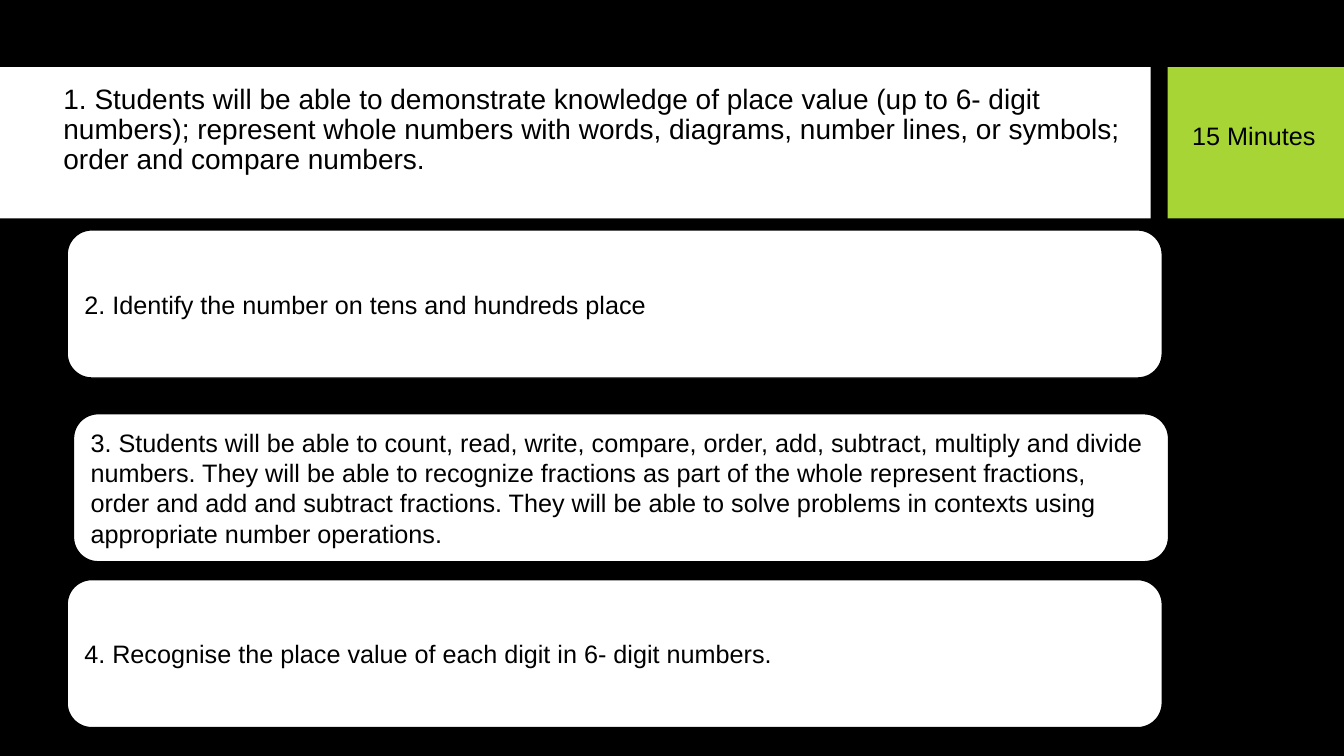
from pptx import Presentation
from pptx.dml.color import RGBColor
from pptx.enum.shapes import MSO_SHAPE
from pptx.enum.text import MSO_ANCHOR, PP_ALIGN
from pptx.util import Pt

RECT, ROUNDED = MSO_SHAPE.RECTANGLE, MSO_SHAPE.ROUNDED_RECTANGLE
TOP, MIDDLE = MSO_ANCHOR.TOP, MSO_ANCHOR.MIDDLE
LEFT = PP_ALIGN.LEFT
PX = 9525  # 96 px to the inch
BLACK, WHITE, GREEN = "000000", "FFFFFF", "A7D535"


def color(value):
    return RGBColor.from_string(value)


def write(sp, text, size, anchor):
    tf = sp.text_frame
    tf.word_wrap = True
    tf.vertical_anchor = anchor
    p = tf.paragraphs[0]
    p.text = text
    p.alignment = LEFT
    p.font.name = "Arial"
    p.font.size = Pt(size)
    p.font.color.rgb = color(BLACK)
    return tf


prs = Presentation()
prs.slide_width, prs.slide_height = 1280 * PX, 720 * PX
s = prs.slides.add_slide(prs.slide_layouts[6])
s.background.fill.solid()
s.background.fill.fore_color.rgb = color(BLACK)

# Header bands
for x, w, fill in [(0, 1096, WHITE), (1112, 168, GREEN)]:
    sp = s.shapes.add_shape(RECT, x * PX, 64 * PX, w * PX, 144 * PX)
    sp.shadow.inherit = False
    sp.fill.solid()
    sp.fill.fore_color.rgb = color(fill)
    sp.line.fill.background()

# Duration
duration = s.shapes.add_textbox(1126 * PX, 110 * PX, 154 * PX, 38 * PX)
write(duration, "15 Minutes", 18, TOP)

# First objective
title = s.shapes.add_textbox(51 * PX, 81 * PX, 1056 * PX, 114 * PX)
tf = write(title, "1. Students will be able to demonstrate knowledge of place value "
           "(up to 6- digit numbers); represent whole numbers with words, diagrams, "
           "number lines, or symbols; order and compare numbers.", 20, TOP)
tf.margin_top = 0
tf.paragraphs[0].line_spacing = 0.9

# Further objectives
objectives = [
    (64, 219, "2. Identify the number on tens and hundreds place"),
    (70, 394, "3. Students will be able to count, read, write, compare, order, add, "
              "subtract, multiply and divide numbers. They will be able to recognize "
              "fractions as part of the whole represent fractions, order and add and "
              "subtract fractions. They will be able to solve problems in contexts "
              "using appropriate number operations."),
    (64, 552, "4. Recognise the place value of each digit in 6- digit numbers."),
]
for x, y, text in objectives:
    sp = s.shapes.add_shape(ROUNDED, x * PX, y * PX, 1043 * PX, 141 * PX)
    sp.shadow.inherit = False
    sp.fill.solid()
    sp.fill.fore_color.rgb = color(WHITE)
    sp.line.color.rgb = color(BLACK)
    sp.line.width = Pt(1)
    write(sp, text, 18, MIDDLE)

prs.save("out.pptx")
